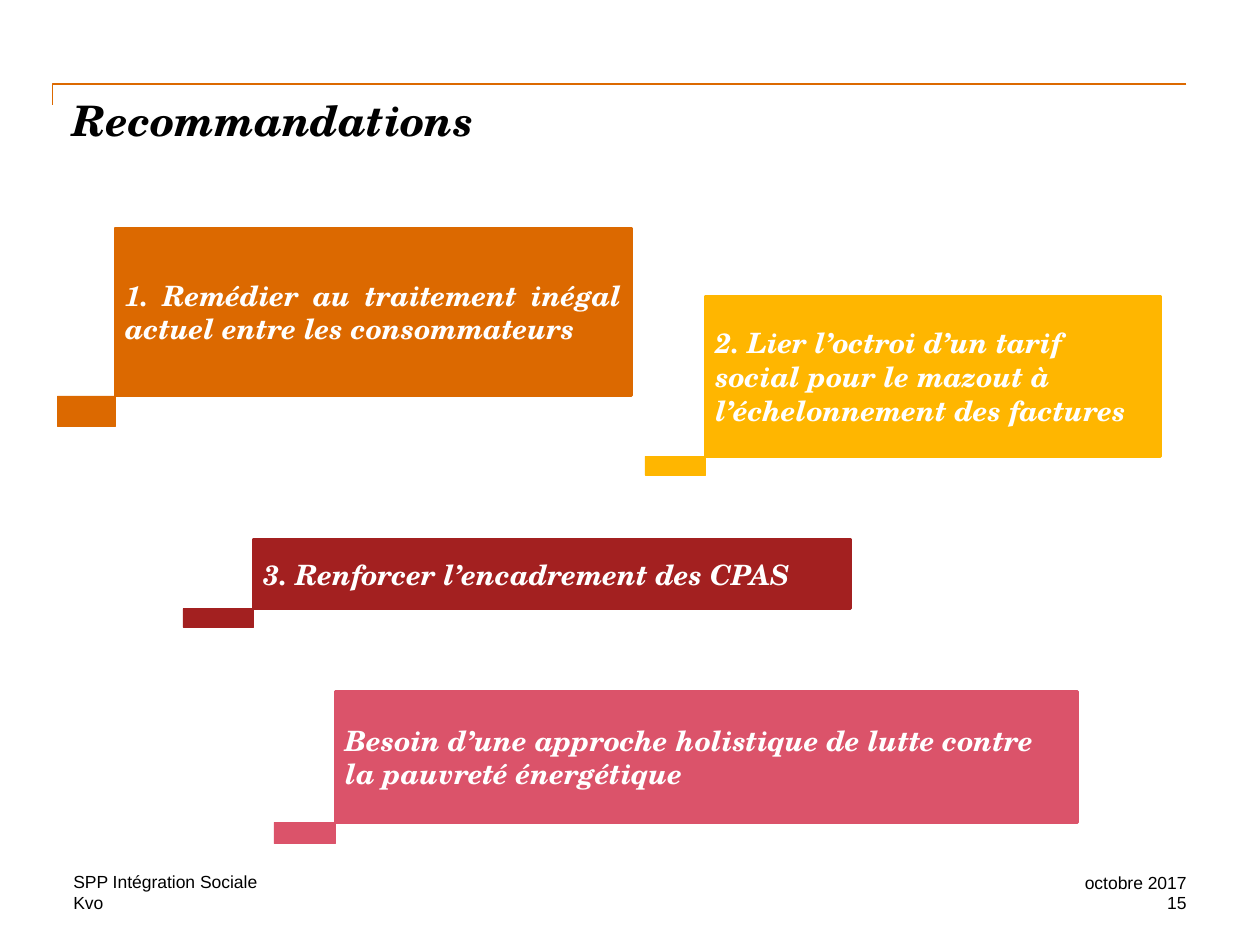
from dataclasses import dataclass

from pptx import Presentation
from pptx.dml.color import RGBColor
from pptx.enum.shapes import MSO_CONNECTOR, MSO_SHAPE
from pptx.enum.text import MSO_ANCHOR, MSO_AUTO_SIZE, PP_ALIGN
from pptx.oxml.ns import qn
from pptx.util import Cm, Pt
from lxml import etree

ELBOW = MSO_CONNECTOR.ELBOW
RECTANGLE = MSO_SHAPE.RECTANGLE
TOP, MIDDLE, BOTTOM = MSO_ANCHOR.TOP, MSO_ANCHOR.MIDDLE, MSO_ANCHOR.BOTTOM
LEFT, RIGHT, JUSTIFY = PP_ALIGN.LEFT, PP_ALIGN.RIGHT, PP_ALIGN.JUSTIFY
NO_AUTOFIT = MSO_AUTO_SIZE.NONE
TITLE_ONLY = 5


@dataclass(frozen=True)
class Theme:
    heading_font: str = "TeX Gyre Schola"
    footer_font: str = "Arial"
    title_size: int = 24
    card_size: int = 16
    footer_size: int = 10
    ink: str = "000000"
    paper: str = "FFFFFF"
    orange: str = "DC6900"
    yellow: str = "FFB600"
    red: str = "A32020"
    rose: str = "DB536A"


THEME = Theme()

RECOMMENDATIONS = [
    ("1. Remédier au traitement inégal actuel entre les consommateurs",
     THEME.orange, (2.32, 4.6, 10.41, 3.38), (1.16, 0.61), JUSTIFY, 9),
    ("2. Lier l’octroi d’un tarif social pour le mazout à l’échelonnement des factures",
     THEME.yellow, (14.22, 5.97, 9.17, 3.23), (1.22, 0.38), LEFT, 6),
    ("3. Renforcer l’encadrement des CPAS",
     THEME.red, (5.11, 10.87, 12.04, 1.4), (1.42, 0.38), LEFT, 0),
    ("Besoin d’une approche holistique de lutte contre la pauvreté énergétique",
     THEME.rose, (6.76, 13.94, 14.96, 2.64), (1.24, 0.43), LEFT, 0),
]


def write(frame, wording, font, size, color, align=LEFT, anchor=TOP, inset=0, emphasis=False):
    frame.word_wrap = True
    frame.auto_size = NO_AUTOFIT
    frame.vertical_anchor = anchor
    frame.margin_left = frame.margin_right = Cm(inset)
    frame.margin_top = frame.margin_bottom = Cm(inset)
    frame.text = wording
    paragraph = frame.paragraphs[0]
    paragraph.alignment = align
    paragraph.font.name = font
    paragraph.font.size = Pt(size)
    paragraph.font.bold = paragraph.font.italic = emphasis
    paragraph.font.color.rgb = RGBColor.from_string(color)
    return paragraph


def add_header(slide, wording, left, top, width):
    rule = slide.shapes.add_connector(
        ELBOW, Cm(left + width), Cm(top), Cm(left), Cm(top + 0.42))
    rule.line.color.rgb = RGBColor.from_string(THEME.orange)
    rule.line.width = Pt(1)
    properties = rule._element.spPr
    properties.find(qn("a:prstGeom")).set("prst", "bentConnector2")
    etree.SubElement(properties, qn("a:effectLst"))

    title = slide.shapes.title
    title.left, title.top = Cm(left + 0.41), Cm(top + 0.21)
    title.width, title.height = Cm(width - 0.43), Cm(2.54)
    write(title.text_frame, wording, THEME.heading_font, THEME.title_size,
          THEME.ink, emphasis=True)


def add_block(group, color, box, line_width):
    block = group.shapes.add_shape(RECTANGLE, *map(Cm, box))
    block.shadow.inherit = False
    block.fill.solid()
    block.fill.fore_color.rgb = RGBColor.from_string(color)
    block.line.color.rgb = RGBColor.from_string(color)
    block.line.width = Pt(line_width)
    return block


def add_recommendation(slide, wording, color, box, tab_size, align, space_after):
    left, top, _, height = box
    tab_width, tab_height = tab_size
    group = slide.shapes.add_group_shape()
    card = add_block(group, color, box, 1.5)
    paragraph = write(card.text_frame, wording, THEME.heading_font, THEME.card_size,
                      THEME.paper, align, MIDDLE, 0.2, True)
    paragraph.space_after = Pt(space_after)
    add_block(group, color, (left - tab_width, top + height, tab_width, tab_height), 0.25)


def add_footer(slide, left, top, width, row_height):
    side = 4.23
    right_column = left + width - side
    entries = [
        ("SPP Intégration Sociale", left, 0, 14.6, LEFT, BOTTOM),
        ("Kvo", left, 1, 7.2, LEFT, TOP),
        ("octobre 2017", right_column, 0, side, RIGHT, TOP),
        ("15", right_column, 1, side, RIGHT, TOP),
    ]
    for wording, x, row, entry_width, align, anchor in entries:
        entry = slide.shapes.add_textbox(
            Cm(x), Cm(top + row * row_height), Cm(entry_width), Cm(row_height))
        write(entry.text_frame, wording, THEME.footer_font, THEME.footer_size,
              THEME.ink, align, anchor)


def main():
    deck = Presentation()
    deck.slide_width, deck.slide_height = Cm(25.4), Cm(19.05)
    slide = deck.slides.add_slide(deck.slide_layouts[TITLE_ONLY])
    add_header(slide, "Recommandations", 1.06, 1.69, 22.86)
    for recommendation in RECOMMENDATIONS:
        add_recommendation(slide, *recommendation)
    add_footer(slide, 1.48, 17.57, 22.44, 0.42)
    deck.save("out.pptx")


if __name__ == "__main__":
    main()
